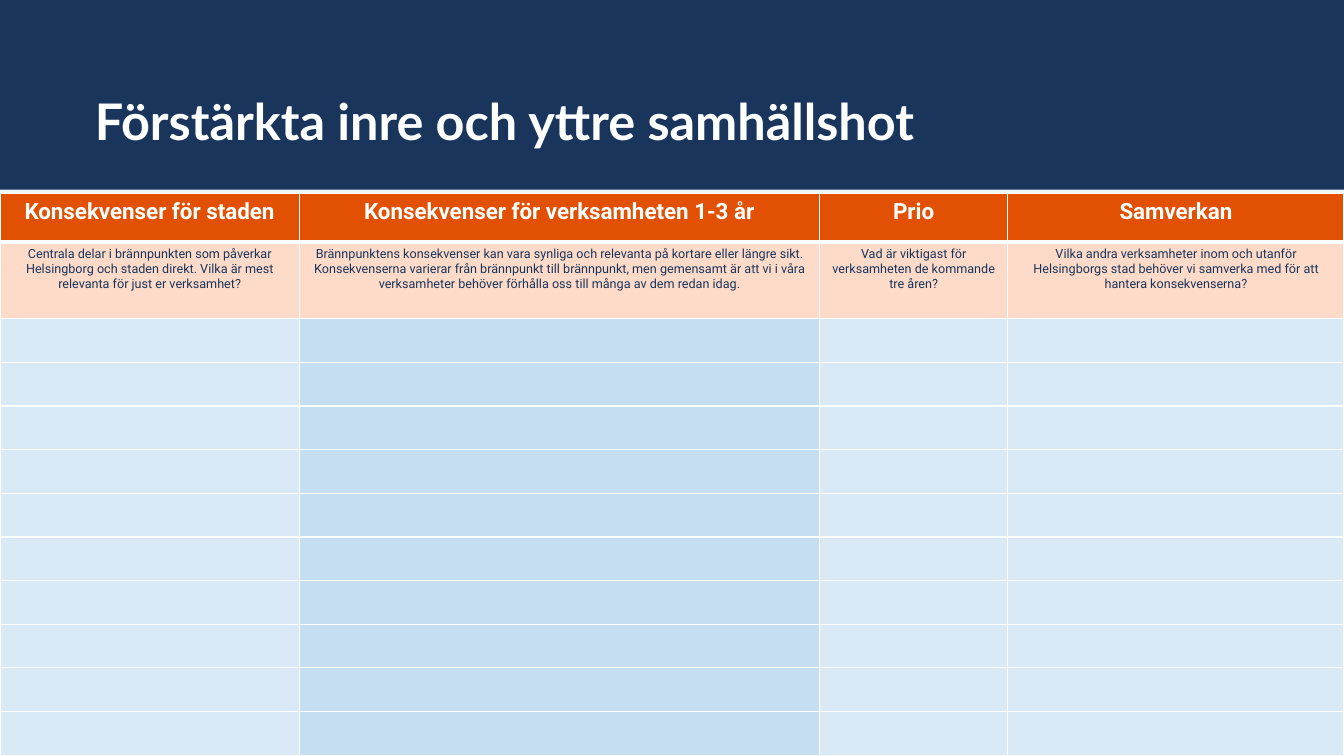
"""Build a consequence planning slide with a title band and a worksheet table."""
from dataclasses import dataclass

from lxml import etree
from pptx import Presentation
from pptx.dml.color import RGBColor
from pptx.enum.shapes import MSO_SHAPE
from pptx.enum.text import MSO_ANCHOR, PP_ALIGN
from pptx.oxml.ns import qn
from pptx.util import Cm, Pt

RECTANGLE = MSO_SHAPE.RECTANGLE
BOTTOM = MSO_ANCHOR.BOTTOM
LEFT, CENTER = PP_ALIGN.LEFT, PP_ALIGN.CENTER

SLIDE_WIDTH, SLIDE_HEIGHT = 33.87, 19.05
TABLE_TOP = 4.88
COLUMN_WIDTHS = [7.54, 13.11, 4.75, 8.47]
HEADER_HEIGHT, GUIDE_HEIGHT, ENTRY_HEIGHT = 1.22, 1.93, 1.1
ENTRY_ROWS = 10
FOCUS_COLUMN = 1

COLUMNS = [
    ("Konsekvenser för staden",
     "Centrala delar i brännpunkten som påverkar Helsingborg och staden direkt. "
     "Vilka är mest relevanta för just er verksamhet?"),
    ("Konsekvenser för verksamheten 1-3 år",
     "Brännpunktens konsekvenser kan vara synliga och relevanta på kortare eller "
     "längre sikt. Konsekvenserna varierar från brännpunkt till brännpunkt, men "
     "gemensamt är att vi i våra verksamheter behöver förhålla oss till många av "
     "dem redan idag."),
    ("Prio",
     "Vad är viktigast för verksamheten de kommande tre åren?"),
    ("Samverkan",
     "Vilka andra verksamheter inom och utanför Helsingborgs stad behöver vi "
     "samverka med för att hantera konsekvenserna?"),
]


@dataclass(frozen=True)
class Theme:
    """Colours, fonts and type sizes of the slide."""
    background: str = "EEF5FB"
    navy: str = "1A355C"
    white: str = "FEFFFF"
    orange: str = "E25103"
    peach: str = "FEDBC8"
    blue: str = "C6DEF2"
    title_font: str = "Lato"
    body_font: str = "Roboto"
    title_size: int = 36
    header_size: int = 16
    guide_size: int = 9
    thin_line: int = 1
    thick_line: int = 3


class SlideBuilder:
    """Hold the theme and the current slide, and add elements to it."""

    def __init__(self, slide, theme):
        """Keep the slide and paint its background."""
        self.slide = slide
        self.theme = theme
        self.paint(slide.background.fill, theme.background)

    def paint(self, fill, color):
        """Make a fill solid in one colour."""
        fill.solid()
        fill.fore_color.rgb = RGBColor.from_string(color)

    def add_text(self, frame, text, alignment, color, **font_values):
        """Put one formatted paragraph into a text frame."""
        paragraph = frame.paragraphs[0]
        paragraph.alignment = alignment
        run = paragraph.add_run()
        run.text = text
        run.font.color.rgb = RGBColor.from_string(color)
        for name, value in font_values.items():
            setattr(run.font, name, value)
        return paragraph

    def band(self, left, top, width, height, color):
        """Add a plain filled rectangle."""
        shape = self.slide.shapes.add_shape(
            RECTANGLE, Cm(left), Cm(top), Cm(width), Cm(height))
        shape.shadow.inherit = False
        shape.line.fill.background()
        self.paint(shape.fill, color)

    def title(self, text, left, top, width, height):
        """Add the bottom-anchored slide title."""
        box = self.slide.shapes.add_textbox(Cm(left), Cm(top), Cm(width), Cm(height))
        frame_values = {"word_wrap": True, "vertical_anchor": BOTTOM,
                        "margin_left": 0, "margin_top": 0,
                        "margin_right": 0, "margin_bottom": 0}
        for name, value in frame_values.items():
            setattr(box.text_frame, name, value)
        paragraph = self.add_text(
            box.text_frame, text, LEFT, self.theme.white, bold=True,
            name=self.theme.title_font, size=Pt(self.theme.title_size))
        paragraph.line_spacing = 0.9

    def style_cell(self, cell, color, top, bottom, opacity=100):
        """Fill a cell and draw its four borders."""
        self.paint(cell.fill, color)
        properties = cell._tc.get_or_add_tcPr()
        if opacity < 100:
            color_element = properties.find(".//" + qn("a:srgbClr"))
            etree.SubElement(color_element, qn("a:alpha"), val=str(opacity * 1000))
        thin = self.theme.thin_line
        borders = {"a:lnL": thin, "a:lnR": thin, "a:lnT": top, "a:lnB": bottom}
        for position, (tag, width) in enumerate(borders.items()):
            line = etree.Element(qn(tag), w=str(Pt(width)))
            fill = etree.SubElement(line, qn("a:solidFill"))
            etree.SubElement(fill, qn("a:srgbClr"), val=self.theme.white)
            properties.insert(position, line)

    def worksheet(self, columns, widths, heights, top):
        """Add the table with header, guiding questions and empty entry rows."""
        theme = self.theme
        thin, thick = theme.thin_line, theme.thick_line
        table = self.slide.shapes.add_table(
            len(heights), len(widths), Cm(0), Cm(top),
            Cm(sum(widths)), Cm(sum(heights))).table
        table.horz_banding = False
        for row, height in zip(table.rows, heights):
            row.height = Cm(height)
        for index, (texts, width) in enumerate(zip(columns, widths)):
            table.columns[index].width = Cm(width)
            header, guide, *entries = [
                table.cell(row, index) for row in range(len(heights))]
            self.style_cell(header, theme.orange, thin, thick)
            self.style_cell(guide, theme.peach, thick, thin)
            self.add_text(header.text_frame, texts[0], CENTER, theme.white, bold=True,
                          name=theme.body_font, size=Pt(theme.header_size))
            self.add_text(guide.text_frame, texts[1], CENTER, theme.navy, bold=False,
                          name=theme.body_font, size=Pt(theme.guide_size))
            opacity = 100 if index == FOCUS_COLUMN else 50
            for entry in entries:
                self.style_cell(entry, theme.blue, thin, thin, opacity)


def main():
    """Build the presentation and save it."""
    presentation = Presentation()
    presentation.slide_width = Cm(SLIDE_WIDTH)
    presentation.slide_height = Cm(SLIDE_HEIGHT)
    slide = presentation.slides.add_slide(presentation.slide_layouts[6])
    theme = Theme()
    builder = SlideBuilder(slide, theme)
    builder.band(0, 0, SLIDE_WIDTH, 4.78, theme.navy)
    builder.title("Förstärkta inre och yttre samhällshot", 2.39, 0.61, 25.4, 3.2)
    heights = [HEADER_HEIGHT, GUIDE_HEIGHT] + [ENTRY_HEIGHT] * ENTRY_ROWS
    builder.worksheet(COLUMNS, COLUMN_WIDTHS, heights, TABLE_TOP)
    presentation.save("out.pptx")


if __name__ == "__main__":
    main()
